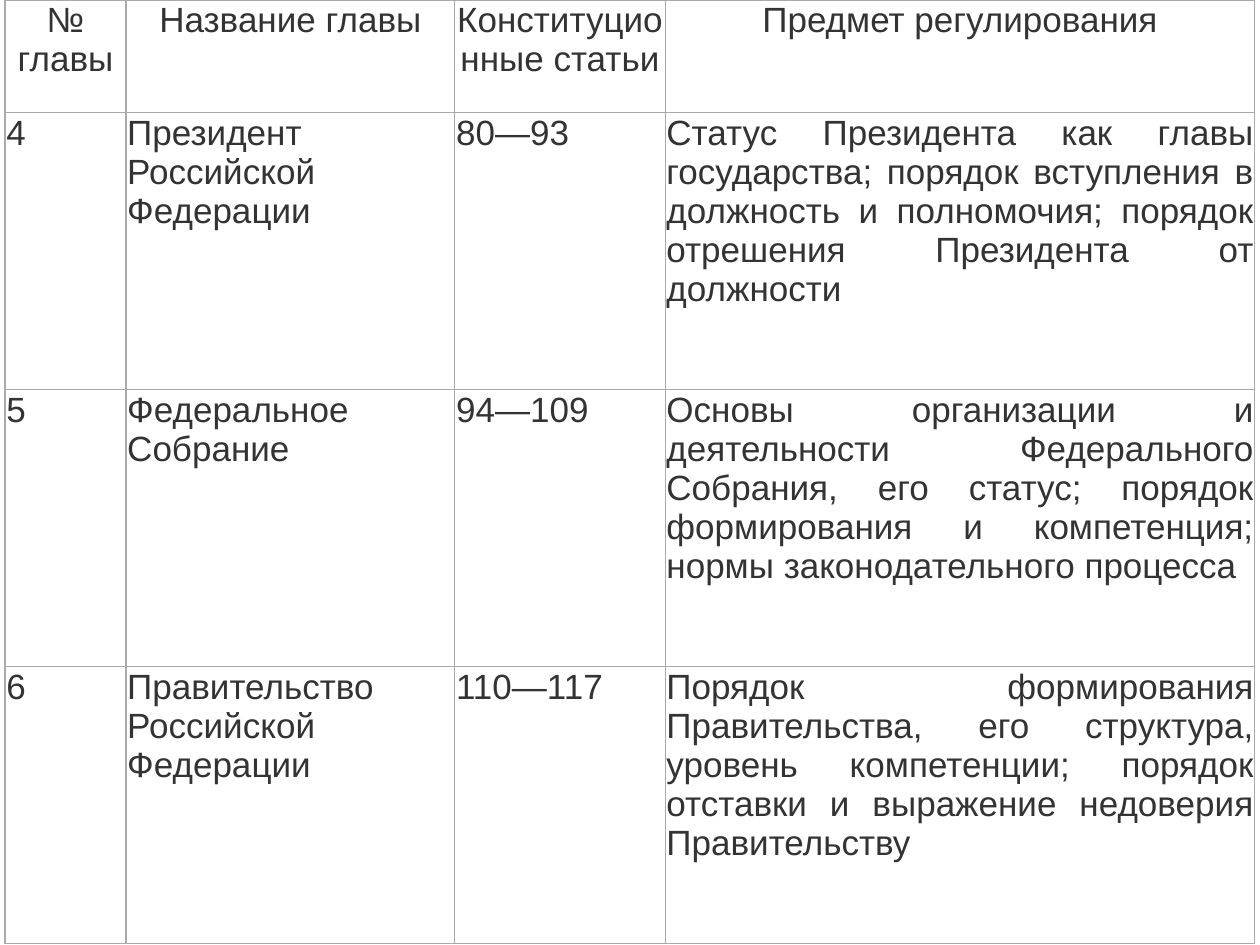
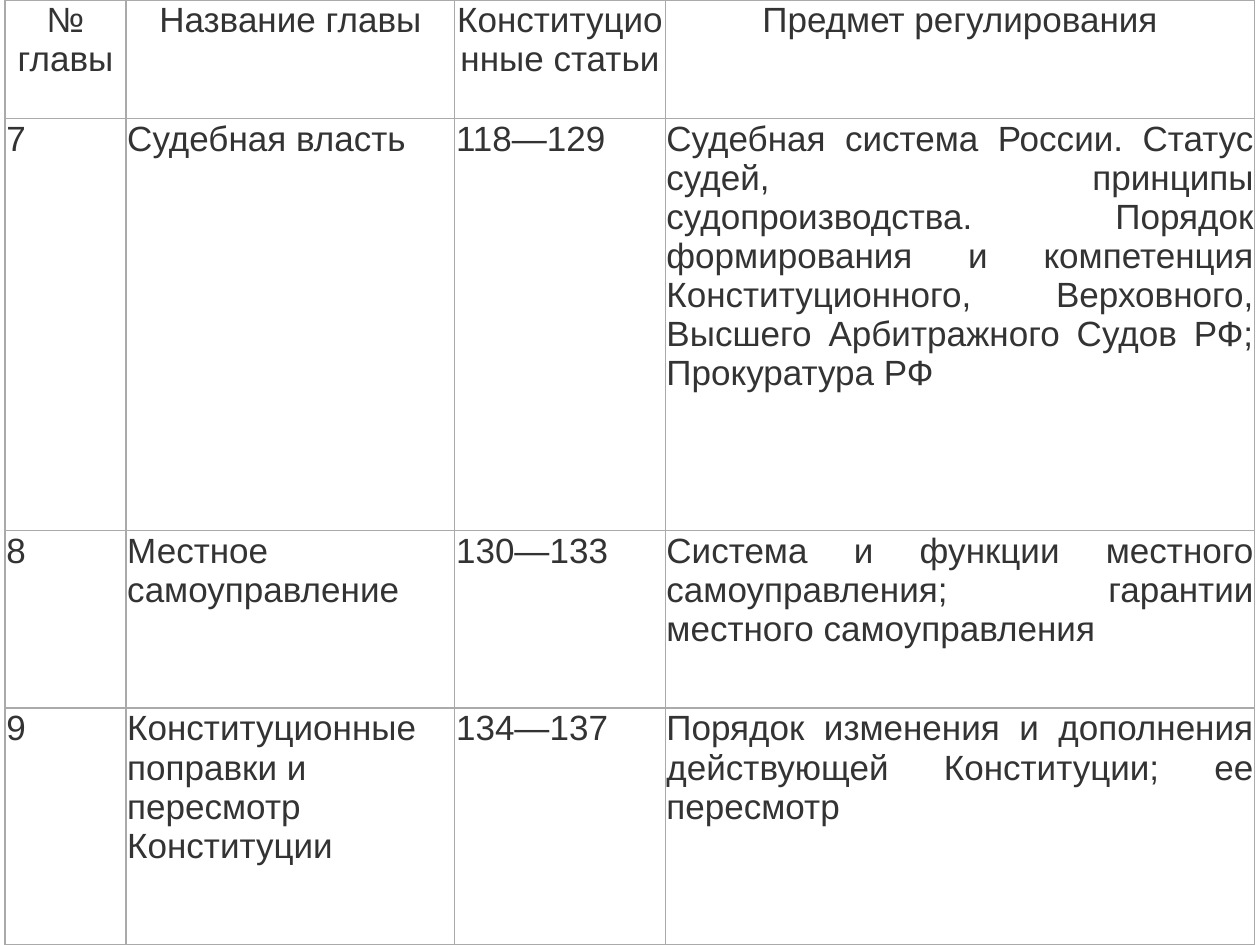
from dataclasses import dataclass

import pptx
import pptx.dml.color
import pptx.enum.text
import pptx.oxml
import pptx.oxml.ns
import pptx.presentation
import pptx.table
import pptx.util
from pptx.util import Inches

Align = pptx.enum.text.PP_ALIGN


@dataclass(frozen=True)
class Theme:
    font: str = "Arial"
    text_size: int = 20
    text_color: str = "333333"
    cell_color: str = "FFFFFF"
    border_color: str = "AAAAAA"
    border_width: float = 0.75


@dataclass(frozen=True)
class Chapter:
    number: str
    title: str
    articles: str
    subject: str
    height: float

    def texts(self) -> tuple[str, ...]:
        return self.number, self.title, self.articles, self.subject


@dataclass(frozen=True)
class ChapterPage:
    header_height: float
    chapters: tuple[Chapter, ...]


THEME = Theme()
TABLE_LEFT = 0.04
CELL_MARGIN = Inches(0.01)
COLUMN_WIDTHS = (0.96, 2.61, 1.67, 4.68)
HEADINGS = ("№\vглавы", "Название главы", "Конституционные статьи", "Предмет регулирования")
HEADING_ALIGNMENTS = (Align.CENTER,) * len(HEADINGS)
CHAPTER_ALIGNMENTS = (Align.LEFT, Align.LEFT, Align.LEFT, Align.JUSTIFY)

PAGES = (
    ChapterPage(0.89, (
        Chapter("4", "Президент Российской Федерации", "80—93",
                "Статус Президента как главы государства; порядок вступления в должность "
                "и полномочия; порядок отрешения Президента от должности", 2.2),
        Chapter("5", "Федеральное Собрание", "94—109",
                "Основы организации и деятельности Федерального Собрания, его статус; "
                "порядок формирования и компетенция; нормы законодательного процесса", 2.2),
        Chapter("6", "Правительство Российской Федерации", "110—117",
                "Порядок формирования Правительства, его структура, уровень компетенции; "
                "порядок отставки и выражение недоверия Правительству", 2.2),
    )),
    ChapterPage(0.94, (
        Chapter("7", "Судебная власть", "118—129",
                "Судебная система России. Статус судей, принципы судопроизводства. "
                "Порядок формирования и компетенция Конституционного, Верховного, "
                "Высшего Арбитражного Судов РФ; Прокуратура РФ", 3.27),
        Chapter("8", "Местное самоуправление", "130—133",
                "Система и функции местного самоуправления; гарантии местного "
                "самоуправления", 1.41),
        Chapter("9", "Конституционные поправки и пересмотр Конституции", "134—137",
                "Порядок изменения и дополнения действующей Конституции; ее пересмотр", 1.88),
    )),
)


def rgb(color: str) -> pptx.dml.color.RGBColor:
    return pptx.dml.color.RGBColor.from_string(color)


def add_borders(cell: pptx.table._Cell) -> None:
    properties = cell._tc.get_or_add_tcPr()
    width = pptx.util.Pt(THEME.border_width)
    for position, side in enumerate(("lnL", "lnR", "lnT", "lnB")):
        properties.insert(position, pptx.oxml.parse_xml(
            f'<a:{side} {pptx.oxml.ns.nsdecls("a")} w="{width}"><a:solidFill>'
            f'<a:srgbClr val="{THEME.border_color}"/></a:solidFill></a:{side}>'
        ))


def fill_cell(cell: pptx.table._Cell, text: str, alignment: Align) -> None:
    cell.margin_left = cell.margin_right = CELL_MARGIN
    cell.margin_top = cell.margin_bottom = CELL_MARGIN
    cell.vertical_anchor = pptx.enum.text.MSO_ANCHOR.TOP
    cell.fill.solid()
    cell.fill.fore_color.rgb = rgb(THEME.cell_color)
    add_borders(cell)
    paragraph = cell.text_frame.paragraphs[0]
    paragraph.text = text
    paragraph.alignment = alignment
    for run in paragraph.runs:
        run.font.name = THEME.font
        run.font.size = pptx.util.Pt(THEME.text_size)
        run.font.color.rgb = rgb(THEME.text_color)


def fill_row(table: pptx.table.Table, index: int, height: float,
             texts: tuple[str, ...], alignments: tuple[Align, ...]) -> None:
    table.rows[index].height = Inches(height)
    for cell, text, alignment in zip(table.rows[index].cells, texts, alignments):
        fill_cell(cell, text, alignment)


def add_chapter_page(deck: pptx.presentation.Presentation, page: ChapterPage) -> None:
    slide = deck.slides.add_slide(deck.slide_layouts[6])
    total_height = page.header_height + sum(chapter.height for chapter in page.chapters)
    table = slide.shapes.add_table(
        len(page.chapters) + 1, len(HEADINGS), Inches(TABLE_LEFT), Inches(0),
        Inches(sum(COLUMN_WIDTHS)), Inches(total_height),
    ).table
    table.first_row = table.horz_banding = False
    for column, width in zip(table.columns, COLUMN_WIDTHS):
        column.width = Inches(width)
    fill_row(table, 0, page.header_height, HEADINGS, HEADING_ALIGNMENTS)
    for index, chapter in enumerate(page.chapters, start=1):
        fill_row(table, index, chapter.height, chapter.texts(), CHAPTER_ALIGNMENTS)


def main() -> None:
    deck = pptx.Presentation()
    deck.slide_width, deck.slide_height = Inches(10), Inches(7.5)
    for page in PAGES:
        add_chapter_page(deck, page)
    deck.save("out.pptx")


if __name__ == "__main__":
    main()
